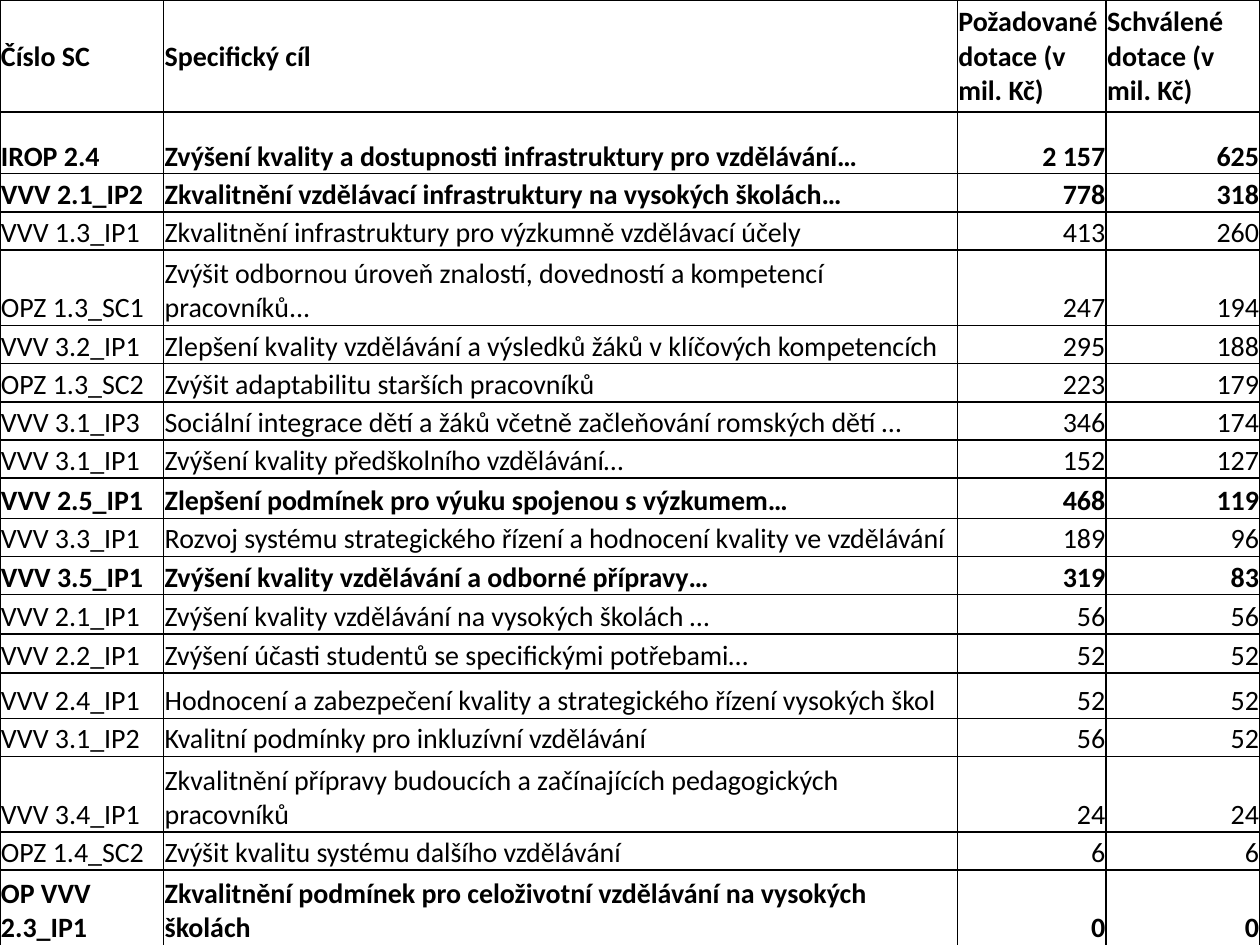
import pptx
import pptx.dml.color
import pptx.enum.text
import pptx.oxml
import pptx.oxml.ns
import pptx.util

Cm = pptx.util.Cm
Pt = pptx.util.Pt
RGBColor = pptx.dml.color.RGBColor
PP_ALIGN = pptx.enum.text.PP_ALIGN
MSO_ANCHOR = pptx.enum.text.MSO_ANCHOR

HEADINGS = ("Číslo SC", "Specifický cíl", "Požadované dotace (v mil. Kč)", "Schválené dotace (v mil. Kč)")
OBJECTIVES = [
    ("IROP 2.4", "Zvýšení kvality a dostupnosti infrastruktury pro vzdělávání…", "2 157", "625"),
    ("VVV 2.1_IP2", "Zkvalitnění vzdělávací infrastruktury na vysokých školách…", "778", "318"),
    ("VVV 1.3_IP1", "Zkvalitnění infrastruktury pro výzkumně vzdělávací účely", "413", "260"),
    ("OPZ 1.3_SC1", "Zvýšit odbornou úroveň znalostí, dovedností a kompetencí pracovníků...", "247", "194"),
    ("VVV 3.2_IP1", "Zlepšení kvality vzdělávání a výsledků žáků v klíčových kompetencích", "295", "188"),
    ("OPZ 1.3_SC2", "Zvýšit adaptabilitu starších pracovníků", "223", "179"),
    ("VVV 3.1_IP3", "Sociální integrace dětí a žáků včetně začleňování romských dětí …", "346", "174"),
    ("VVV 3.1_IP1", "Zvýšení kvality předškolního vzdělávání…", "152", "127"),
    ("VVV 2.5_IP1", "Zlepšení podmínek pro výuku spojenou s výzkumem…", "468", "119"),
    ("VVV 3.3_IP1", "Rozvoj systému strategického řízení a hodnocení kvality ve vzdělávání", "189", "96"),
    ("VVV 3.5_IP1", "Zvýšení kvality vzdělávání a odborné přípravy…", "319", "83"),
    ("VVV 2.1_IP1", "Zvýšení kvality vzdělávání na vysokých školách …", "56", "56"),
    ("VVV 2.2_IP1", "Zvýšení účasti studentů se specifickými potřebami…", "52", "52"),
    ("VVV 2.4_IP1", "Hodnocení a zabezpečení kvality a strategického řízení vysokých škol", "52", "52"),
    ("VVV 3.1_IP2", "Kvalitní podmínky pro inkluzívní vzdělávání", "56", "52"),
    ("VVV 3.4_IP1", "Zkvalitnění přípravy budoucích a začínajících pedagogických pracovníků", "24", "24"),
    ("OPZ 1.4_SC2", "Zvýšit kvalitu systému dalšího vzdělávání", "6", "6"),
    ("OP VVV 2.3_IP1", "Zkvalitnění podmínek pro celoživotní vzdělávání na vysokých školách", "0", "0"),
]
HIGHLIGHTED = {"IROP 2.4", "VVV 2.1_IP2", "VVV 2.5_IP1", "VVV 3.5_IP1", "OP VVV 2.3_IP1"}

COLUMN_WIDTHS = (3.3, 16, 3, 3.1)
HEADING_HEIGHT = 2.26
LINE_HEIGHT = 0.77
SPECIAL_HEIGHTS = {
    "IROP 2.4": 1.24,
    "OPZ 1.3_SC1": 1.52,
    "VVV 2.5_IP1": 0.81,
    "VVV 2.1_IP1": 0.79,
    "VVV 2.2_IP1": 0.79,
    "VVV 2.4_IP1": 0.91,
    "VVV 3.4_IP1": 1.52,
    "OP VVV 2.3_IP1": 1.52,
}
THEME = {
    "font": "Calibri",
    "size": Pt(16),
    "text": RGBColor(0, 0, 0),
    "fill": RGBColor(255, 255, 255),
    "border": "000000",
    "border_width": Pt(1),
    "inset": Cm(0.02),
}


def add_borders(cell):
    properties = cell._tc.get_or_add_tcPr()
    for position, side in enumerate(("lnL", "lnR", "lnT", "lnB")):
        border = pptx.oxml.parse_xml(
            f'<a:{side} {pptx.oxml.ns.nsdecls("a")} w="{THEME["border_width"]}">'
            f'<a:solidFill><a:srgbClr val="{THEME["border"]}"/></a:solidFill></a:{side}>'
        )
        properties.insert(position, border)


def fill_cell(cell, wording, bold, align, anchor):
    cell.text = wording
    cell.vertical_anchor = anchor
    cell.margin_left = cell.margin_right = cell.margin_top = THEME["inset"]
    cell.margin_bottom = 0
    cell.fill.solid()
    cell.fill.fore_color.rgb = THEME["fill"]
    add_borders(cell)
    paragraph = cell.text_frame.paragraphs[0]
    paragraph.alignment = align
    paragraph.font.name = THEME["font"]
    paragraph.font.size = THEME["size"]
    paragraph.font.bold = bold
    paragraph.font.color.rgb = THEME["text"]


def main():
    deck = pptx.Presentation()
    deck.slide_width, deck.slide_height = Cm(25.4), Cm(19.05)
    slide = deck.slides.add_slide(deck.slide_layouts[6])

    lines = [HEADINGS] + OBJECTIVES
    heights = [HEADING_HEIGHT] + [SPECIAL_HEIGHTS.get(line[0], LINE_HEIGHT) for line in OBJECTIVES]
    subsidies = slide.shapes.add_table(
        len(lines), len(HEADINGS), 0, 0, Cm(sum(COLUMN_WIDTHS)), Cm(sum(heights))
    ).table
    for column, width in zip(subsidies.columns, COLUMN_WIDTHS):
        column.width = Cm(width)

    for row, height, line in zip(subsidies.rows, heights, lines):
        row.height = Cm(height)
        heading = line is HEADINGS
        bold = heading or line[0] in HIGHLIGHTED
        anchor = MSO_ANCHOR.MIDDLE if heading else MSO_ANCHOR.BOTTOM
        for index, (cell, wording) in enumerate(zip(row.cells, line)):
            align = PP_ALIGN.LEFT if heading or index < 2 else PP_ALIGN.RIGHT
            fill_cell(cell, wording, bold, align, anchor)

    deck.save("out.pptx")


if __name__ == "__main__":
    main()
